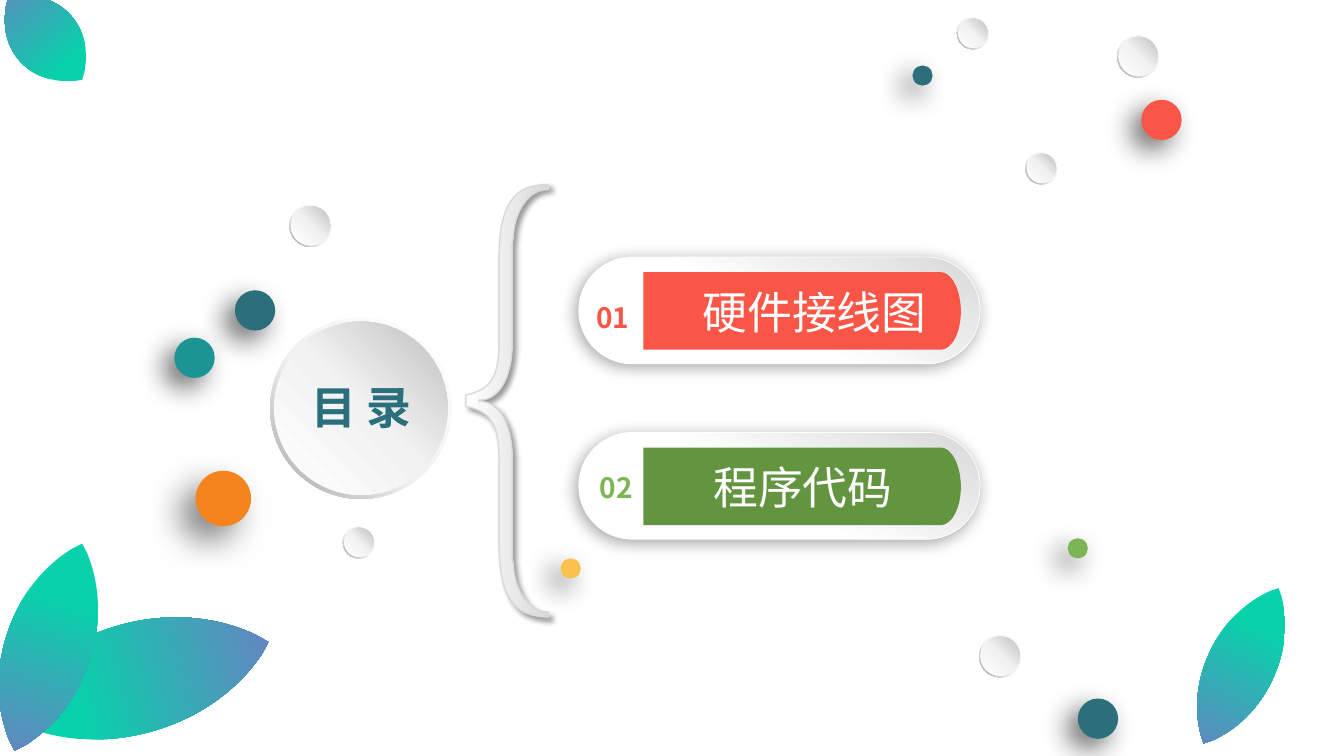
from lxml import etree
from pptx import Presentation
from pptx.dml.color import RGBColor
from pptx.enum.shapes import MSO_SHAPE
from pptx.enum.text import MSO_ANCHOR, PP_ALIGN
from pptx.oxml import parse_xml
from pptx.oxml.ns import qn
from pptx.util import Inches, Pt

DONUT, ELLIPSE, PILL = MSO_SHAPE.DONUT, MSO_SHAPE.OVAL, MSO_SHAPE.ROUNDED_RECTANGLE
CENTER, MIDDLE = PP_ALIGN.CENTER, MSO_ANCHOR.MIDDLE
FONT = "Noto Sans CJK SC"
NAMESPACE = "http://schemas.openxmlformats.org/drawingml/2006/main"

BLACK = RGBColor(0x00, 0x00, 0x00)
WHITE = RGBColor(0xFF, 0xFF, 0xFF)
PALE = RGBColor(0xF2, 0xF2, 0xF2)
SILVER = RGBColor(0xD9, 0xD9, 0xD9)
GREY = RGBColor(0xBF, 0xBF, 0xBF)
DARK_GREY = RGBColor(0xA6, 0xA6, 0xA6)
NAVY_TEAL = RGBColor(0x2B, 0x6F, 0x7D)
TEAL = RGBColor(0x1C, 0x94, 0x94)
RED = RGBColor(0xF9, 0x56, 0x47)
GREEN = RGBColor(0x63, 0x95, 0x41)
LIGHT_GREEN = RGBColor(0x7C, 0xB5, 0x54)
YELLOW = RGBColor(0xFA, 0xC1, 0x4D)
ORANGE = RGBColor(0xF5, 0x84, 0x1C)
MINT = RGBColor(0x09, 0xD1, 0xAB)
VIOLET = RGBColor(0x6E, 0x7D, 0xC3)

RIM_STOPS = [(0, WHITE), (55, PALE), (100, DARK_GREY)]
FACE_STOPS = [(0, WHITE), (51, PALE), (100, GREY)]
PILL_STOPS = [(45, WHITE), (100, SILVER)]
BRACE_STOPS = [(0, WHITE), (100, SILVER)]
LEAF_STOPS = [(0, MINT), (31, MINT), (100, VIOLET)]

BRACE_INNER = [(0.82, 0), (0.82, 0.05), (0.81, 0.05), (0.63, 0.05, 0.48, 0.26, 0.47, 0.53),
               (0.46, 0.59), (0.46, 1.59), (0.46, 1.84, 0.37, 2.14, 0.13, 2.14)]
BRACE_OUTER = [(0, 2.09), (0.13, 2.06, 0.22, 2.01, 0.26, 1.93),
               (0.31, 1.86, 0.33, 1.73, 0.33, 1.55), (0.33, 0.74),
               (0.33, 0.46, 0.37, 0.27, 0.45, 0.16), (0.52, 0.05, 0.65, 0, 0.82, 0)]
TAB = [(0, 0), (2.95, 0), (3.06, 0, 3.15, 0.18, 3.15, 0.39),
       (3.15, 0.6, 3.06, 0.77, 2.95, 0.77), (0, 0.77)]
LEAF_QUARTER = [(0, -1), (-0.18, -0.93), (-0.69, -0.69, -1, -0.37, -1, 0)]

ENTRIES = [
    (2.55, "01", 5.81, 0.38, RED, "硬件接线图", 6.85, 2.46, RED),
    (4.29, "02", 5.84, 0.32, LIGHT_GREEN, "程序代码", 6.86, 2.21, GREEN),
]
LEAVES = [(0.79, 5.36, 1.1, 2.74, 254.8), (0.05, 5.34, 0.86, 2.16, 18.1),
          (11.97, 5.75, 0.68, 1.71, 25.7), (0.11, -0.17, 0.68, 1.1, 138.3)]
DOTS = [(11.32, 0.99, 0.4, RED), (9.05, 0.65, 0.2, NAVY_TEAL), (2.33, 2.88, 0.4, NAVY_TEAL),
        (5.56, 5.54, 0.2, YELLOW), (10.69, 6.93, 0.4, NAVY_TEAL), (1.73, 3.35, 0.4, TEAL),
        (10.59, 5.34, 0.2, LIGHT_GREEN)]
BUTTONS = [(9.49, 0.17, 0.32), (11.08, 0.35, 0.42), (3.4, 5.22, 0.32),
           (10.17, 1.51, 0.32), (9.71, 6.3, 0.42), (2.87, 2.03, 0.42)]


def transform(steps, scale_x, scale_y, shift_x=0, shift_y=0):
    """Scale and shift every coordinate pair of an outline."""
    scales, shifts = (scale_x, scale_y), (shift_x, shift_y)
    return [tuple(value * scales[index % 2] + shifts[index % 2] for index, value in enumerate(step))
            for step in steps]


def reverse(steps):
    """Walk an outline of lines and curves from its end to its start."""
    result = [steps[-1][-2:]]
    for previous, step in zip(steps[-2::-1], steps[:0:-1]):
        result.append(step[2:4] + step[:2] + previous[-2:] if len(step) == 6 else previous[-2:])
    return result


def paint(shape, fill, angle=0, line=None, shadow=None):
    """Give a shape a solid or gradient fill, an outline and a shadow."""
    shape.shadow.inherit = False
    if isinstance(fill, RGBColor):
        shape.fill.solid()
        shape.fill.fore_color.rgb = fill
    else:
        stops = "".join(f'<a:gs pos="{position * 1000}"><a:srgbClr val="{color}"/></a:gs>'
                        for position, color in fill)
        gradient = parse_xml(f'<a:gradFill xmlns:a="{NAMESPACE}" rotWithShape="1"><a:gsLst>{stops}'
                             f'</a:gsLst><a:lin ang="{angle * 60000}" scaled="0"/></a:gradFill>')
        properties = shape._element.spPr
        geometry = [child for child in properties if child.tag in (qn("a:prstGeom"), qn("a:custGeom"))]
        geometry[0].addnext(gradient)
    if line:
        shape.line.color.rgb, shape.line.width = line[0], Pt(line[1])
    else:
        shape.line.fill.background()
    if shadow:
        opacity, blur, distance, direction = shadow
        effects = shape._element.spPr.find(qn("a:effectLst"))
        outer = etree.SubElement(effects, qn("a:outerShdw"), blurRad=str(Pt(blur)), dist=str(Pt(distance)),
                                 dir=str(direction * 60000), algn="ctr", rotWithShape="0")
        color = etree.SubElement(outer, qn("a:srgbClr"), val=str(BLACK))
        etree.SubElement(color, qn("a:alpha"), val=str(opacity * 1000))


def add_preset(slide, kind, left, top, width, height, adjustment=None, **style):
    """Place a painted preset shape."""
    shape = slide.shapes.add_shape(kind, Inches(left), Inches(top), Inches(width), Inches(height))
    if adjustment is not None:
        shape.adjustments[0] = adjustment
    paint(shape, **style)


def add_outline(slide, left, top, steps, **style):
    """Place a painted closed outline of lines and curves from a corner."""
    corners = [(Inches(left + step[-2]), Inches(top + step[-1])) for step in steps]
    builder = slide.shapes.build_freeform(*corners[0])
    builder.add_line_segments(corners[1:], close=True)
    shape = builder.convert_to_shape()
    segments = list(shape._element.iter(qn("a:lnTo")))
    for segment, step in zip(segments, steps[1:]):
        if len(step) == 6:
            curve = etree.Element(qn("a:cubicBezTo"))
            for x, y in zip(step[::2], step[1::2]):
                etree.SubElement(curve, qn("a:pt"), x=str(Inches(left + x) - shape.left),
                                 y=str(Inches(top + y) - shape.top))
            segment.getparent().replace(segment, curve)
    paint(shape, **style)
    return shape


def add_label(slide, left, top, width, height, text, size, color, bold=False):
    """Place one centred line of text."""
    frame = slide.shapes.add_textbox(Inches(left), Inches(top), Inches(width), Inches(height)).text_frame
    formats = dict(word_wrap=True, vertical_anchor=MIDDLE, margin_left=0, margin_right=0,
                   margin_top=0, margin_bottom=0)
    for name, value in formats.items():
        setattr(frame, name, value)
    paragraph = frame.paragraphs[0]
    paragraph.alignment = CENTER
    run = paragraph.add_run()
    run.text = text
    for name, value in dict(name=FONT, size=Pt(size), bold=bold).items():
        setattr(run.font, name, value)
    run.font.color.rgb = color
    etree.SubElement(run._r.get_or_add_rPr(), qn("a:ea"), typeface=FONT)


def add_button(slide, left, top, size, inset=0.015):
    """Draw a raised round button with a shaded rim."""
    face = size - 2 * inset
    add_preset(slide, DONUT, left, top, size, size, 0.049, fill=RIM_STOPS, angle=135)
    add_preset(slide, ELLIPSE, left + inset, top + inset, face, face, fill=FACE_STOPS, angle=315)


def add_brace(slide, left, top, height):
    """Draw the brace from its upper half and the mirrored lower half."""
    lower = [transform(reverse(part), 1, -1, 0, height) for part in (BRACE_INNER, BRACE_OUTER)]
    add_outline(slide, left, top, BRACE_INNER + lower[0] + lower[1][1:] + BRACE_OUTER[:],
                fill=BRACE_STOPS, line=(SILVER, 1), shadow=(40, 4, 3, 45))


def add_entry(slide, left, top, number, number_left, number_drop, number_color,
              title, title_left, title_width, tab_color):
    """Draw one contents entry: pill, coloured tab, number and title."""
    add_preset(slide, PILL, left, top, 3.98, 1.06, 0.5, fill=PILL_STOPS, angle=300,
               line=(WHITE, 0.5), shadow=(34, 12, 3, 135))
    add_outline(slide, left + 0.64, top + 0.15, TAB, fill=tab_color)
    add_label(slide, number_left, top + number_drop, 0.54, 0.44, number, 20, number_color, True)
    add_label(slide, title_left, top + 0.22, title_width, 0.64, title, 32, WHITE)


def add_leaf(slide, left, top, width, height, rotation):
    """Draw a leaf filling the box, then turn it."""
    half = LEAF_QUARTER + reverse(transform(LEAF_QUARTER, 1, -1))[1:]
    ring = half + reverse(transform(half, -1, 1))[1:-1]
    steps = transform(ring, width / 2, height / 2, width / 2, height / 2)
    leaf = add_outline(slide, left, top, steps, fill=LEAF_STOPS, angle=90)
    leaf.rotation = rotation


def build_contents_slide(slide):
    """Compose the contents slide."""
    add_button(slide, 2.68, 3.15, 1.8, 0.04)
    add_label(slide, 2.8, 3.76, 1.57, 0.54, "目 录", 32, NAVY_TEAL, True)
    add_brace(slide, 4.62, 1.83, 4.29)
    for top, *details in ENTRIES:
        add_entry(slide, 5.74, top, *details)
    for leaf in LEAVES:
        add_leaf(slide, *leaf)
    for left, top, size, color in DOTS:
        add_preset(slide, ELLIPSE, left, top, size, size, fill=color, shadow=(60, 20, 10, 135))
    add_preset(slide, ELLIPSE, 1.94, 4.67, 0.55, 0.55, fill=ORANGE, shadow=(50, 25, 15, 135))
    for button in BUTTONS:
        add_button(slide, *button)


def main():
    """Create the presentation and save it."""
    presentation = Presentation()
    presentation.slide_width, presentation.slide_height = Inches(13.33), Inches(7.5)
    build_contents_slide(presentation.slides.add_slide(presentation.slide_layouts[6]))
    presentation.save("out.pptx")


if __name__ == "__main__":
    main()
